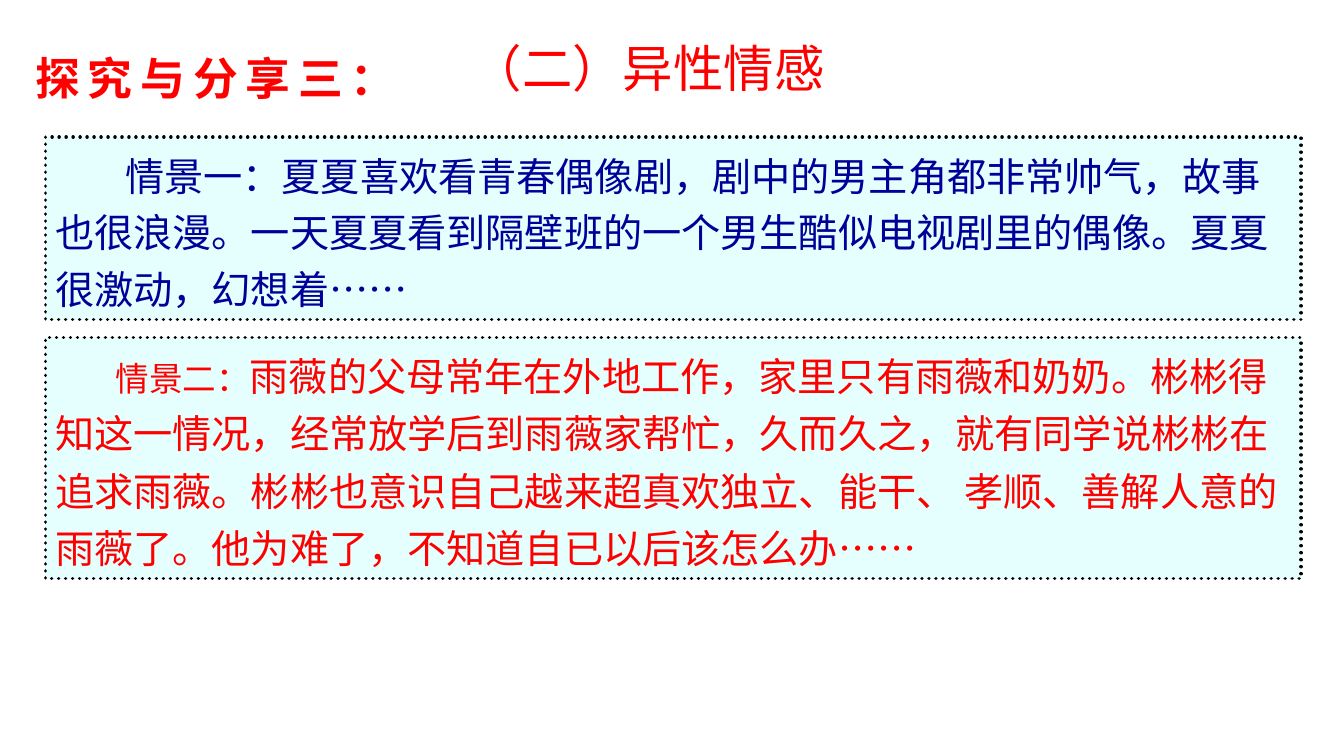
from pptx import Presentation
from pptx import util as u
from pptx.dml.color import RGBColor
from pptx.enum import dml, shapes, text
from pptx.oxml.ns import qn
from lxml import etree

RED = RGBColor(0xFF, 0x00, 0x00)
NAVY = RGBColor(0x00, 0x00, 0x99)
PALE_CYAN = RGBColor(0xCC, 0xFF, 0xFF)
BLACK = RGBColor(0x00, 0x00, 0x00)
SANS = "Noto Sans CJK SC"
SERIF = "Times New Roman"


def style_text(font, size, face, color):
    """Set size, colour, Latin typeface and the shared East Asian typeface."""
    font.size = u.Pt(size)
    font.color.rgb = color
    font.name = face
    etree.SubElement(font._element, qn("a:ea")).set("typeface", SANS)


def add_heading(page, box, words, size):
    """Place a one-line red heading and return its paragraph."""
    heading = page.shapes.add_textbox(*map(u.Pt, box))
    frame = heading.text_frame
    frame.word_wrap = True
    frame.auto_size = text.MSO_AUTO_SIZE.SHAPE_TO_FIT_TEXT
    para = frame.paragraphs[0]
    span = para.add_run()
    span.text = words
    style_text(span.font, size, SANS, RED)
    return para


def add_section_label(page, box):
    """Place the bold, widely spaced section label."""
    para = add_heading(page, box, "探究与分享三：", 32)
    para.alignment = text.PP_ALIGN.LEFT
    para.line_spacing = 1.5
    span = para.runs[0]
    span.font.bold = True
    span.font._element.set("spc", "560")


def add_scenario(page, box, spans, color, indent, spacing):
    """Place a dotted panel holding one indented paragraph."""
    panel = page.shapes.add_shape(shapes.MSO_SHAPE.RECTANGLE, *map(u.Pt, box))
    panel.shadow.inherit = False
    panel.fill.solid()
    panel.fill.fore_color.rgb = PALE_CYAN
    fill_color = panel.fill._xPr.find(qn("a:solidFill"))[0]
    etree.SubElement(fill_color, qn("a:alpha")).set("val", "51000")
    panel.line.color.rgb = BLACK
    panel.line.width = u.Pt(2.5)
    panel.line.dash_style = dml.MSO_LINE.ROUND_DOT
    panel.line._ln.set("cap", "rnd")

    frame = panel.text_frame
    frame.word_wrap = True
    frame.auto_size = text.MSO_AUTO_SIZE.SHAPE_TO_FIT_TEXT
    frame.vertical_anchor = text.MSO_ANCHOR.TOP
    para = frame.paragraphs[0]
    para.alignment = text.PP_ALIGN.LEFT
    para.line_spacing = u.Pt(spacing)
    para._p.get_or_add_pPr().set("indent", str(int(u.Pt(indent))))
    for words, size, face in spans:
        span = para.add_run()
        span.text = words
        style_text(span.font, size, face, color)


def add_discussion(page, left, width):
    """Stack the two scenarios in one column."""
    add_scenario(page, (left, 97.9, width, 130.3), [
        ("情景一：夏夏喜欢看青春偶像剧，剧中的男主角都非常帅气，故事也很浪漫。"
         "一天夏夏看到隔壁班的一个男生酷似电视剧里的偶像。夏夏很激动，幻想着……",
         28, SANS),
    ], NAVY, 50, 40.6)
    add_scenario(page, (left, 241.2, width, 172.1), [
        ("情景二：", 24, SERIF),
        ("雨薇的父母常年在外地工作，家里只有雨薇和奶奶。彬彬得知这一情况，"
         "经常放学后到雨薇家帮忙，久而久之，就有同学说彬彬在追求雨薇。"
         "彬彬也意识自己越来超真欢独立、能干、 孝顺、善解人意的雨薇了。"
         "他为难了，不知道自已以后该怎么办", 28, SERIF),
        ("……", 28, SANS),
    ], RED, 43, 40.8)


def main():
    """Build the slide and save it."""
    deck = Presentation()
    deck.slide_width, deck.slide_height = u.Pt(960), u.Pt(540)
    page = deck.slides.add_slide(deck.slide_layouts[6])
    add_section_label(page, (18, 13.7, 285, 65.5))
    add_heading(page, (329.8, 23, 299.5, 51.1), "（二）异性情感", 36)
    add_discussion(page, 32.4, 897.1)
    deck.save("out.pptx")


if __name__ == "__main__":
    main()
